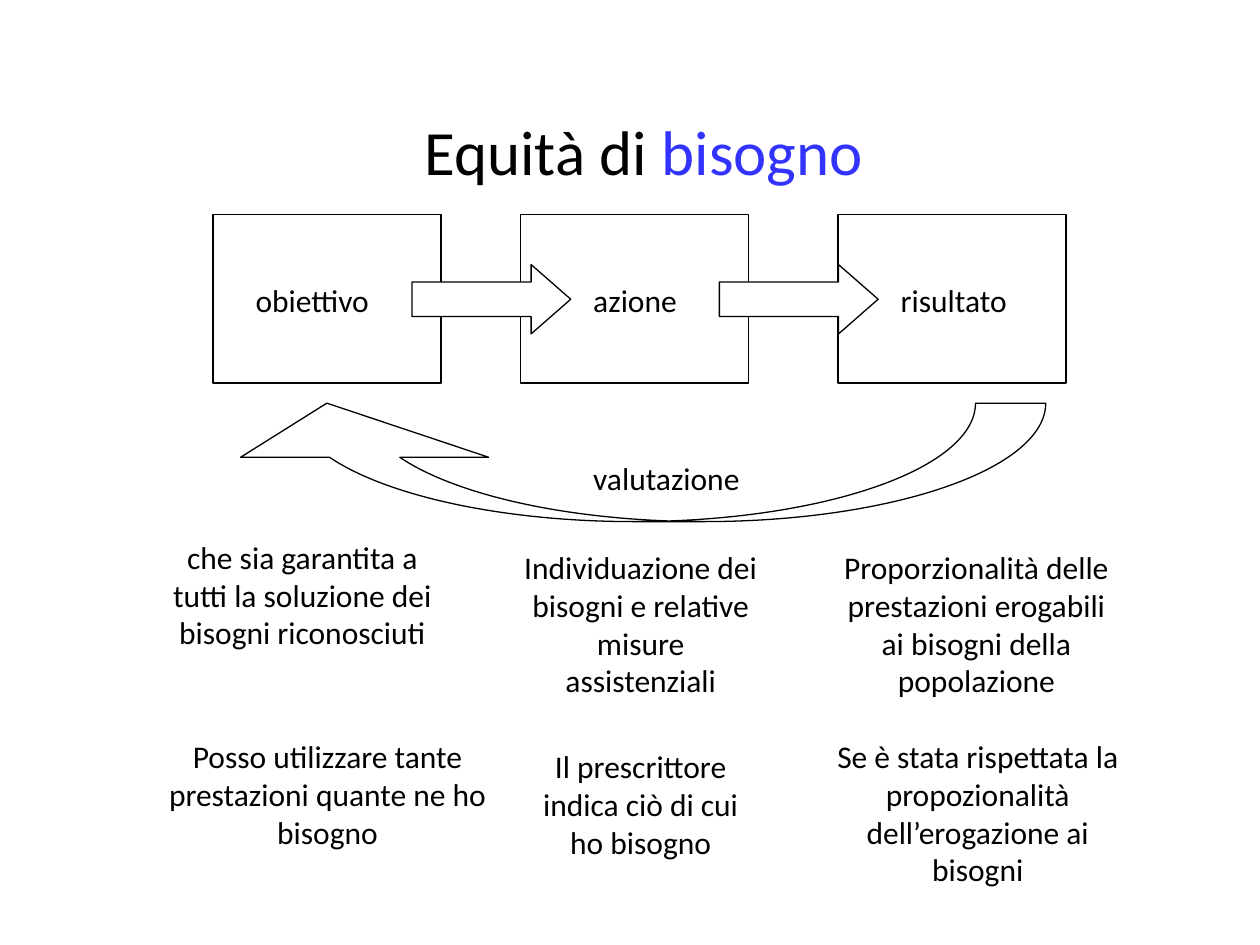
from pptx import Presentation
from pptx.dml.color import RGBColor
from pptx.enum.shapes import MSO_SHAPE
from pptx.enum.text import MSO_AUTO_SIZE, PP_ALIGN
from pptx.util import Inches, Pt

RECTANGLE = MSO_SHAPE.RECTANGLE
RIGHT_ARROW = MSO_SHAPE.RIGHT_ARROW
CURVED_UP_ARROW = MSO_SHAPE.CURVED_UP_ARROW
FIT_SHAPE = MSO_AUTO_SIZE.SHAPE_TO_FIT_TEXT
LEFT, CENTER = PP_ALIGN.LEFT, PP_ALIGN.CENTER

FONT = "Calibri"
COLORS = {"black": "000000", "white": "FFFFFF", "accent": "3333FF"}

TITLE = [("Equità di ", "black"), ("bisogno", "accent")]
TITLE_BOX = (3.27, 0.84, 4.25, 0.7)

STEP_LEFTS = [1.69, 4.13, 6.65]
STEP_TOP, STEP_WIDTH, STEP_HEIGHT = 1.7, 1.81, 1.34
ARROW_TOP, ARROW_WIDTH, ARROW_HEIGHT = 2.1, 1.26, 0.55
ARROW_OVERLAP = 0.23
FEEDBACK_BOX = (1.61, 3.2, 6.69, 0.94)

# text, (left, top, width, height)
LABELS = [
    ("obiettivo", (1.93, 2.18, 1.26, 0.4)),
    ("azione", (4.61, 2.18, 1.02, 0.4)),
    ("risultato", (7.05, 2.18, 1.26, 0.4)),
    ("valutazione", (4.61, 3.59, 1.49, 0.4)),
]
DESCRIPTIONS = [
    ("che sia garantita a tutti la soluzione dei bisogni riconosciuti",
     (1.22, 4.22, 2.36, 1.3)),
    ("Individuazione dei bisogni e relative misure assistenziali",
     (4.06, 4.3, 2.05, 1.3)),
    ("Proporzionalità delle prestazioni erogabili ai bisogni della popolazione",
     (6.57, 4.3, 2.36, 1.3)),
    ("Posso utilizzare tante prestazioni quante ne ho bisogno",
     (1.22, 5.8, 2.76, 1)),
    ("Il prescrittore indica ciò di cui ho bisogno",
     (4.06, 5.88, 2.05, 1)),
    ("Se è stata rispettata la propozionalità dell’erogazione ai bisogni",
     (6.5, 5.8, 2.52, 1.3)),
]


def color(name):
    return RGBColor.from_string(COLORS[name])


def add_outlined(slide, kind, box, adjustments=(), filled=True):
    shape = slide.shapes.add_shape(kind, *map(Inches, box))
    shape.shadow.inherit = False
    for index, value in enumerate(adjustments):
        shape.adjustments[index] = value
    if filled:
        shape.fill.solid()
        shape.fill.fore_color.rgb = color("white")
    else:
        shape.fill.background()
    shape.line.color.rgb = color("black")
    shape.line.width = Pt(0.75)
    return shape


def add_text(slide, parts, box, size=18, alignment=LEFT):
    """Add a text box whose parts are (text, colour name) pairs."""
    text_frame = slide.shapes.add_textbox(*map(Inches, box)).text_frame
    text_frame.word_wrap = True
    text_frame.auto_size = FIT_SHAPE
    paragraph = text_frame.paragraphs[0]
    paragraph.alignment = alignment
    for text, color_name in parts:
        run = paragraph.add_run()
        run.text = text
        run.font.name = FONT
        run.font.size = Pt(size)
        run.font.color.rgb = color(color_name)


def main():
    presentation = Presentation()
    presentation.slide_width = Inches(10)
    presentation.slide_height = Inches(7.5)
    slide = presentation.slides.add_slide(presentation.slide_layouts[6])

    for left in STEP_LEFTS:
        add_outlined(slide, RECTANGLE, (left, STEP_TOP, STEP_WIDTH, STEP_HEIGHT))
    for left in STEP_LEFTS[:-1]:
        arrow_left = left + STEP_WIDTH - ARROW_OVERLAP
        add_outlined(slide, RIGHT_ARROW,
                     (arrow_left, ARROW_TOP, ARROW_WIDTH, ARROW_HEIGHT),
                     (0.5, 0.571))

    feedback = add_outlined(slide, CURVED_UP_ARROW, FEEDBACK_BOX,
                            (0.593, 2.094, 0.457), filled=False)
    feedback.element.spPr.xfrm.set("flipH", "1")

    add_text(slide, TITLE, TITLE_BOX, size=36)
    for text, box in LABELS:
        add_text(slide, [(text, "black")], box)
    for text, box in DESCRIPTIONS:
        add_text(slide, [(text, "black")], box, alignment=CENTER)

    presentation.save("out.pptx")


if __name__ == "__main__":
    main()
